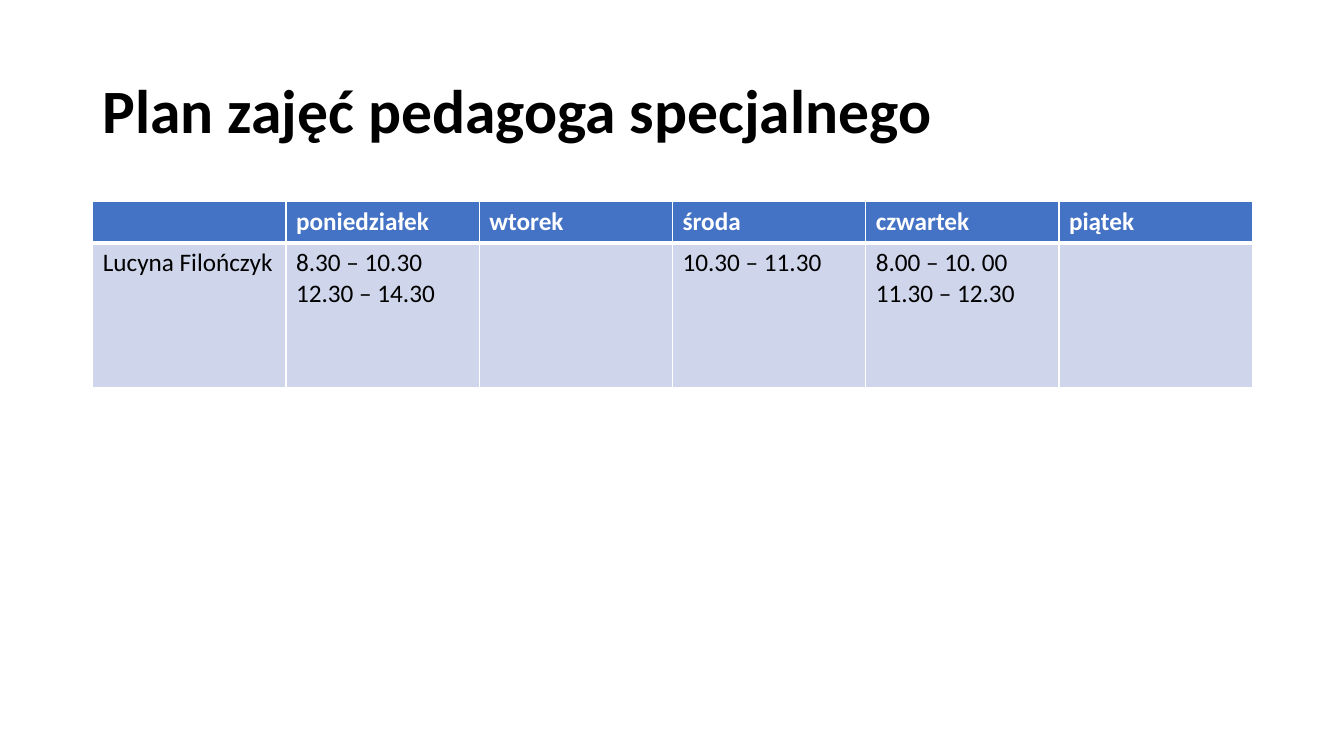
from dataclasses import dataclass

from lxml.etree import SubElement
from pptx import Presentation
from pptx.dml.color import RGBColor
from pptx.enum.text import MSO_ANCHOR
from pptx.oxml.ns import qn
from pptx.util import Inches, Pt

COLORS = {"white": "FFFFFF", "black": "000000", "header": "4472C4", "body": "CFD5EA"}
FONT = "Calibri"


@dataclass(frozen=True)
class ScheduleRow:
    height: float
    fill: str
    color: str
    bold: bool
    top: int
    bottom: int
    entries: tuple[str, ...]


SCHEDULE = (
    ScheduleRow(0.41, "header", "white", True, 1, 3,
                ("", "poniedziałek", "wtorek", "środa", "czwartek", "piątek")),
    ScheduleRow(1.44, "body", "black", False, 3, 1,
                ("Lucyna Filończyk", "8.30 – 10.30\n12.30 – 14.30", "",
                 "10.30 – 11.30", "8.00 – 10. 00\n11.30 – 12.30", "")),
)


def write_text(frame, text: str, *, size: int, color: str, bold: bool = False,
               line_spacing: float = 1.0) -> None:
    for index, line in enumerate(text.split("\n")):
        para = frame.add_paragraph() if index else frame.paragraphs[0]
        para.line_spacing = line_spacing
        para.font.size = Pt(size)
        if not line:
            continue
        span = para.add_run()
        span.text = line
        span.font.name = FONT
        span.font.size = Pt(size)
        span.font.bold = bold
        span.font.color.rgb = RGBColor.from_string(COLORS[color])


def set_borders(cell, widths: dict[str, int]) -> None:
    properties = cell._tc.get_or_add_tcPr()
    for side, width in widths.items():
        line = SubElement(properties, qn(f"a:ln{side}"), w=str(Pt(width)))
        fill = SubElement(line, qn("a:solidFill"))
        SubElement(fill, qn("a:srgbClr"), val=COLORS["white"])


def add_title(page, text: str) -> None:
    box = page.shapes.add_textbox(Inches(0.92), Inches(0.4), Inches(11.5), Inches(1.45))
    box.text_frame.word_wrap = True
    box.text_frame.vertical_anchor = MSO_ANCHOR.MIDDLE
    write_text(box.text_frame, text, size=44, color="black", bold=True, line_spacing=0.9)


def add_schedule(page, rows: tuple[ScheduleRow, ...]) -> None:
    height = sum(row.height for row in rows)
    table = page.shapes.add_table(len(rows), len(rows[0].entries), Inches(0.92), Inches(2),
                                  Inches(11.5), Inches(height)).table
    for row_index, row in enumerate(rows):
        table.rows[row_index].height = Inches(row.height)
        for column_index, entry in enumerate(row.entries):
            cell = table.cell(row_index, column_index)
            set_borders(cell, {"L": 1, "R": 1, "T": row.top, "B": row.bottom})
            cell.fill.solid()
            cell.fill.fore_color.rgb = RGBColor.from_string(COLORS[row.fill])
            write_text(cell.text_frame, entry, size=18, color=row.color, bold=row.bold)


def main() -> None:
    deck = Presentation()
    deck.slide_width, deck.slide_height = Inches(13.33), Inches(7.5)
    page = deck.slides.add_slide(deck.slide_layouts[6])
    add_title(page, "Plan zajęć pedagoga specjalnego")
    add_schedule(page, SCHEDULE)
    deck.save("out.pptx")


if __name__ == "__main__":
    main()
